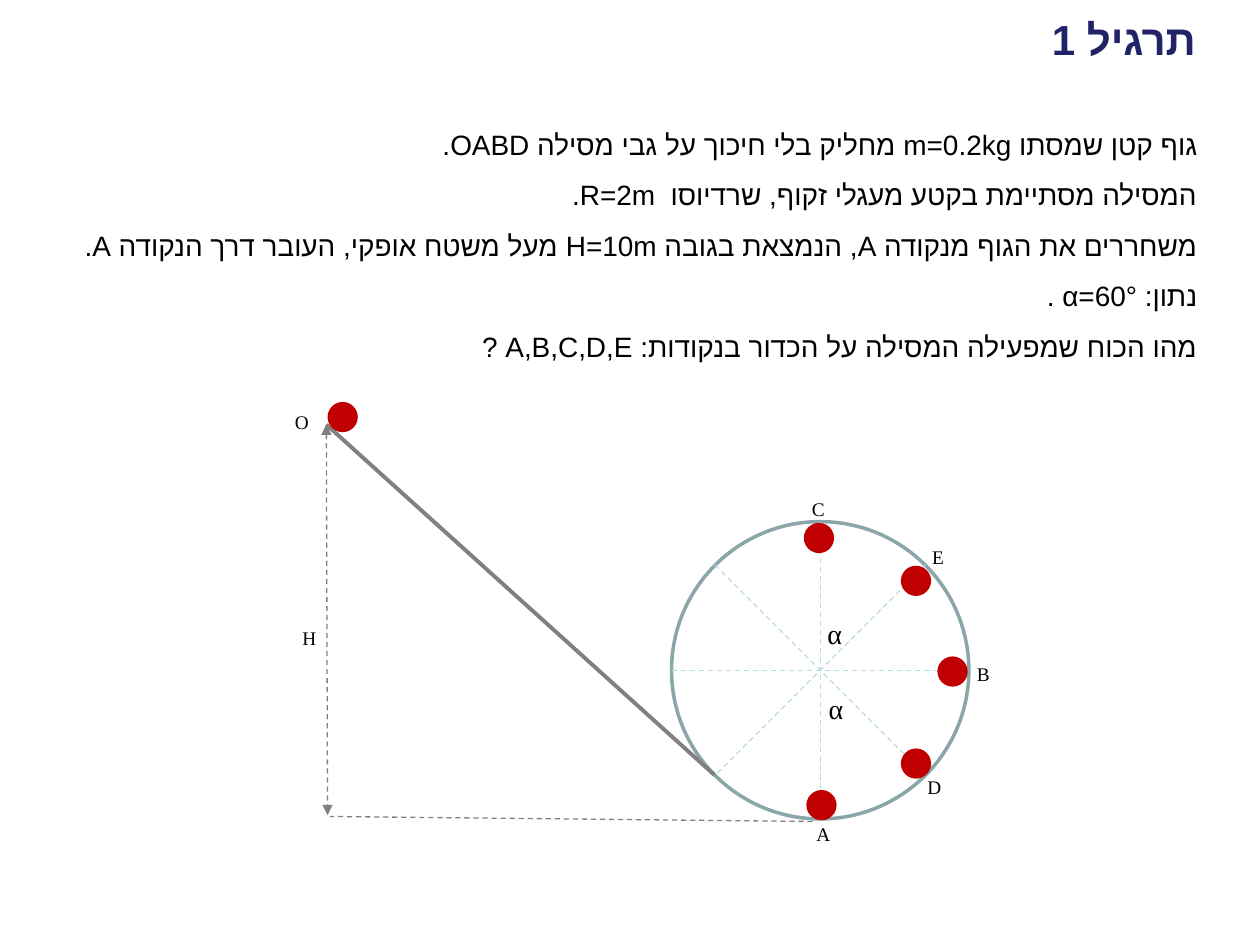
from math import cos, pi, sin

from lxml.etree import SubElement
from pptx import Presentation
from pptx.dml.color import RGBColor
from pptx.enum.dml import MSO_LINE
from pptx.enum.shapes import MSO_CONNECTOR, MSO_SHAPE
from pptx.enum.text import MSO_ANCHOR, PP_ALIGN
from pptx.oxml.ns import qn
from pptx.util import Inches, Pt

COLORS = {
    "title": "222267",
    "text": "000000",
    "loop": "8AA6A8",
    "spoke": "B6DCDF",
    "ball": "C00000",
    "track": "808080",
}
BALL_SIZE = 0.24
TITLE = "תרגיל 1"
PROBLEM = [
    "גוף קטן שמסתו m=0.2kg מחליק בלי חיכוך על גבי מסילה OABD.",
    "המסילה מסתיימת בקטע מעגלי זקוף, שרדיוסו  R=2m.",
    "משחררים את הגוף מנקודה A, הנמצאת בגובה H=10m מעל משטח אופקי, העובר דרך הנקודה A.",
    "נתון: α=60° .",
    "מהו הכוח שמפעילה המסילה על הכדור בנקודות: A,B,C,D,E ?",
]


def rgb(name):
    return RGBColor.from_string(COLORS[name])


def add_text(page, box, lines, size=11, font="Times New Roman", color="text", bold=False,
             align=PP_ALIGN.CENTER, anchor=MSO_ANCHOR.TOP, rtl=False, spacing=None, inset=0.05):
    frame = page.shapes.add_textbox(*map(Inches, box)).text_frame
    frame.word_wrap = True
    frame.vertical_anchor = anchor
    frame.margin_top = frame.margin_bottom = Inches(inset)
    for index, line in enumerate(lines):
        para = frame.paragraphs[0] if index == 0 else frame.add_paragraph()
        para.alignment = align
        if spacing:
            para.line_spacing = spacing
        if rtl:
            para._p.get_or_add_pPr().set("rtl", "1")
        span = para.add_run()
        span.text = line
        span.font.name = font
        span.font.size = Pt(size)
        span.font.bold = bold
        span.font.color.rgb = rgb(color)
        SubElement(span._r.get_or_add_rPr(), qn("a:cs"), typeface=font)


def add_line(page, start, end, color, width=0.75, dashed=True, arrows=False):
    line = page.shapes.add_connector(MSO_CONNECTOR.STRAIGHT, *map(Inches, (*start, *end)))
    line.line.color.rgb = rgb(color)
    line.line.width = Pt(width)
    if dashed:
        line.line.dash_style = MSO_LINE.DASH
    if arrows:
        for tag in ("a:headEnd", "a:tailEnd"):
            SubElement(line.line._get_or_add_ln(), qn(tag), type="triangle")
    SubElement(line._element.spPr, qn("a:effectLst"))


def add_circle(page, left, top, size, fill=None, outline=None):
    circle = page.shapes.add_shape(MSO_SHAPE.OVAL, *map(Inches, (left, top, size, size)))
    circle.shadow.inherit = False
    if fill:
        circle.fill.solid()
        circle.fill.fore_color.rgb = rgb(fill)
    else:
        circle.fill.background()
    if outline:
        circle.line.color.rgb = rgb(outline)
        circle.line.width = Pt(2)
    else:
        circle.line.fill.background()


def add_problem(page, title_box, body_box):
    hebrew = {"font": "Arial", "align": PP_ALIGN.RIGHT, "rtl": True, "inset": 0.1}
    add_text(page, title_box, [TITLE], size=24, color="title", bold=True,
             anchor=MSO_ANCHOR.MIDDLE, **hebrew)
    add_text(page, body_box, PROBLEM, size=16, spacing=1.5, **hebrew)


def add_loop(page, box):
    left, top, size, _ = box
    radius = size / 2
    center_x, center_y = left + radius, top + radius
    add_circle(page, left, top, size, outline="loop")
    for step in range(4):
        dx, dy = radius * cos(step * pi / 4), radius * sin(step * pi / 4)
        add_line(page, (center_x - dx, center_y - dy), (center_x + dx, center_y + dy), "spoke")
    stations = [
        ("E", (1.82, 0.35), (1.95, 0.14)),
        ("C", (1.05, 0.01), (1.00, -0.24)),
        ("B", (2.11, 1.07), (2.31, 1.07)),
        ("D", (1.82, 1.80), (1.92, 1.96)),
        ("A", (1.07, 2.13), (1.04, 2.34)),
    ]
    for name, (ball_x, ball_y), (label_x, label_y) in stations:
        add_circle(page, left + ball_x, top + ball_y, BALL_SIZE, fill="ball")
        add_text(page, (left + label_x, top + label_y, 0.33, 0.29), [name])
    for angle_x, angle_y in ((1.06, 0.70), (1.07, 1.30)):
        add_text(page, (left + angle_x, top + angle_y, 0.47, 0.38), ["α"], size=16)


def add_ramp(page, box):
    left, top, width, height = box
    start = (left, top)
    add_line(page, (left + 3.08, top + 2.78), start, "track", width=2.25, dashed=False)
    add_line(page, (left + width, top + height), (left + 0.03, top + 3.11), "track")
    add_line(page, start, (left + 0.01, top + 3.1), "track", arrows=True)
    add_circle(page, left + 0.01, top - 0.18, BALL_SIZE, fill="ball")
    for name, dx, dy in (("H", -0.3, 1.55), ("O", -0.36, -0.16)):
        add_text(page, (left + dx, top + dy, 0.33, 0.28), [name])


def main():
    deck = Presentation()
    deck.slide_width, deck.slide_height = Inches(10), Inches(7.5)
    page = deck.slides.add_slide(deck.slide_layouts[6])
    add_problem(page, (1.19, 0.11, 8.4, 0.39), (0.15, 0.78, 9.45, 6.45))
    add_loop(page, (5.33, 4.14, 2.36, 2.36))
    add_ramp(page, (2.59, 3.37, 3.86, 3.15))
    deck.save("out.pptx")


if __name__ == "__main__":
    main()
